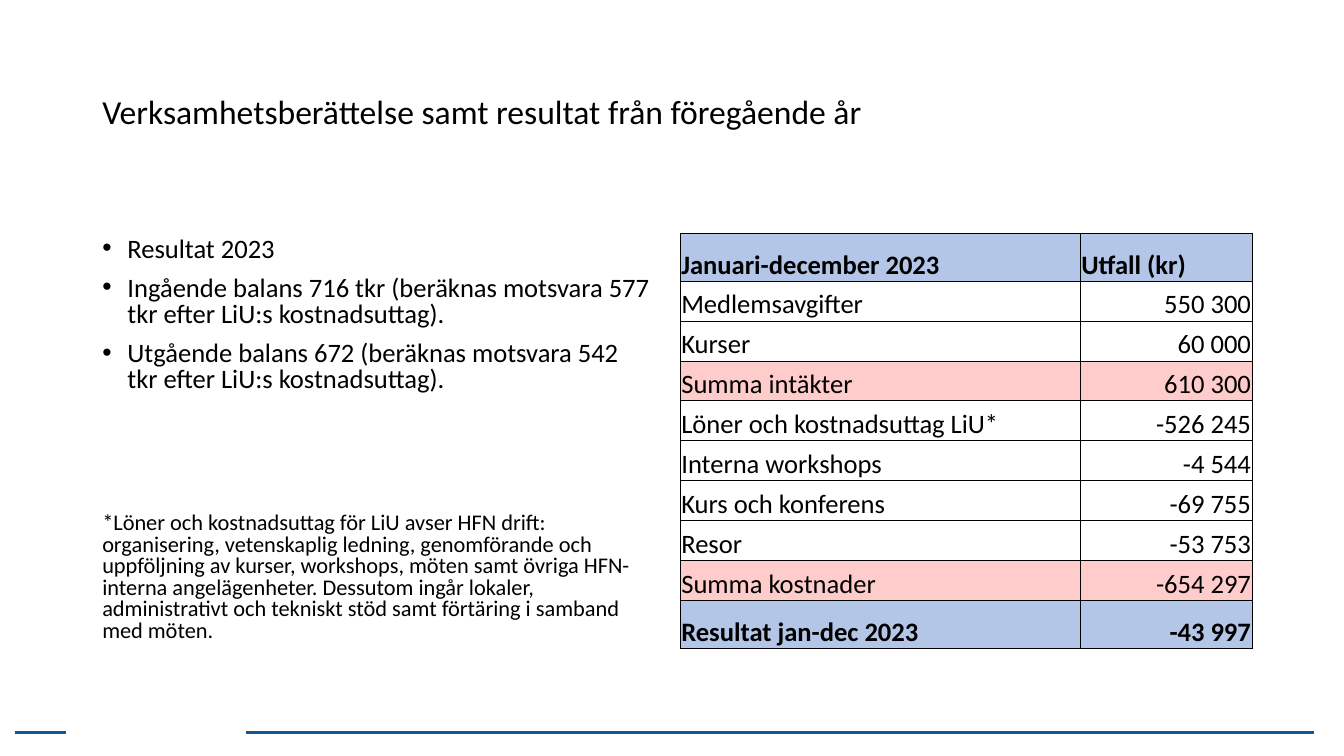
"""Build the slide with last year's activity report and financial result."""
from dataclasses import dataclass

from lxml import etree
from pptx import Presentation
from pptx import util as u
from pptx.dml.color import RGBColor
from pptx.enum import shapes, text
from pptx.oxml import ns

BLACK = RGBColor(0x00, 0x00, 0x00)
RULE_BLUE = RGBColor(0x10, 0x58, 0x95)
TOTAL_BLUE = RGBColor(0xB4, 0xC6, 0xE7)
SUBTOTAL_PINK = RGBColor(0xFF, 0xCC, 0xCC)
FONT = "Calibri"
BODY_SIZE = 19
LEFT, TOP = 66, 166.3


@dataclass(frozen=True)
class FooterRule:
    start: float
    end: float


@dataclass(frozen=True)
class ResultRow:
    label: str
    amount: str
    fill: RGBColor | None = None
    bold: bool = False
    height: float = 28.5
    amount_align: text.PP_ALIGN = text.PP_ALIGN.RIGHT


@dataclass(frozen=True)
class BodyParagraph:
    content: str
    size: float = BODY_SIZE
    bullet: bool = True
    space_before: float = 10


FOOTER_RULES = [FooterRule(175.7, 938.9), FooterRule(10.8, 46.8)]

BODY = [
    BodyParagraph("Resultat 2023", space_before=0),
    BodyParagraph("Ingående balans 716 tkr (beräknas motsvara 577 tkr efter LiU:s kostnadsuttag)."),
    BodyParagraph("Utgående balans 672 (beräknas motsvara 542 tkr efter LiU:s kostnadsuttag)."),
    BodyParagraph(
        "*Löner och kostnadsuttag för LiU avser HFN drift: organisering, vetenskaplig ledning, "
        "genomförande och uppföljning av kurser, workshops, möten samt övriga HFN-interna "
        "angelägenheter. Dessutom ingår lokaler, administrativt och tekniskt stöd samt "
        "förtäring i samband med möten.",
        size=16, bullet=False, space_before=86),
]

RESULT_ROWS = [
    ResultRow("Januari-december 2023", "Utfall (kr)", TOTAL_BLUE, True, 34.5, text.PP_ALIGN.LEFT),
    ResultRow("Medlemsavgifter", "550 300"),
    ResultRow("Kurser", "60 000"),
    ResultRow("Summa intäkter", "610 300", SUBTOTAL_PINK),
    ResultRow("Löner och kostnadsuttag LiU*", "-526 245"),
    ResultRow("Interna workshops", "-4 544"),
    ResultRow("Kurs och konferens", "-69 755"),
    ResultRow("Resor", "-53 753"),
    ResultRow("Summa kostnader", "-654 297", SUBTOTAL_PINK),
    ResultRow("Resultat jan-dec 2023", "-43 997", TOTAL_BLUE, True, 34.5),
]
COLUMN_WIDTHS = [285.8, 122.4]


def write_text(paragraph, content: str, *, size: float = BODY_SIZE, bold: bool = False,
               align: text.PP_ALIGN = text.PP_ALIGN.LEFT, bullet: bool = False,
               line_spacing: float = 1.0, space_before: float = 0) -> None:
    """Fill a paragraph with formatted text."""
    if bullet:
        properties = paragraph._p.get_or_add_pPr()
        properties.set("marL", str(u.Pt(18)))
        properties.set("indent", str(u.Pt(-18)))
        etree.SubElement(properties, ns.qn("a:buFont"), typeface="Arial")
        etree.SubElement(properties, ns.qn("a:buChar"), char="•")
    paragraph.alignment = align
    paragraph.line_spacing = line_spacing
    paragraph.space_before = u.Pt(space_before)
    run = paragraph.add_run()
    run.text = content
    run.font.name = FONT
    run.font.size = u.Pt(size)
    run.font.bold = bold
    run.font.color.rgb = BLACK


def add_text_frame(slide, top: float, width: float, height: float,
                   anchor: text.MSO_ANCHOR):
    """Add a wrapping text box at the left margin and return its frame."""
    shape = slide.shapes.add_textbox(u.Pt(LEFT), u.Pt(top), u.Pt(width), u.Pt(height))
    frame = shape.text_frame
    frame.word_wrap = True
    frame.vertical_anchor = anchor
    return frame


def add_footer_rule(slide, rule: FooterRule) -> None:
    """Draw one horizontal rule at the foot of the slide."""
    height = u.Pt(523.4)
    connector = slide.shapes.add_connector(
        shapes.MSO_CONNECTOR.STRAIGHT, u.Pt(rule.start), height, u.Pt(rule.end), height)
    connector.line.color.rgb = RULE_BLUE
    connector.line.width = u.Pt(2.25)
    etree.SubElement(connector._element.spPr, ns.qn("a:effectLst"))


def add_cell_borders(cell) -> None:
    """Give a cell thin black borders on all sides."""
    properties = cell._tc.get_or_add_tcPr()
    for side in ("lnL", "lnR", "lnT", "lnB"):
        line = etree.SubElement(properties, ns.qn(f"a:{side}"), w=str(u.Pt(0.5)))
        fill = etree.SubElement(line, ns.qn("a:solidFill"))
        etree.SubElement(fill, ns.qn("a:srgbClr"), val=str(BLACK))


def fill_cell(cell, content: str, row: ResultRow, align: text.PP_ALIGN) -> None:
    """Format one table cell and write its text."""
    cell.margin_left = cell.margin_right = cell.margin_top = u.Pt(0.7)
    cell.margin_bottom = u.Pt(0)
    cell.vertical_anchor = text.MSO_ANCHOR.BOTTOM
    add_cell_borders(cell)
    if row.fill is None:
        cell.fill.background()
    else:
        cell.fill.solid()
        cell.fill.fore_color.rgb = row.fill
    write_text(cell.text_frame.paragraphs[0], content, bold=row.bold, align=align)


def add_result_table(slide, rows: list[ResultRow]) -> None:
    """Add the table of income, costs and result."""
    table = slide.shapes.add_table(
        len(rows), len(COLUMN_WIDTHS), u.Pt(486), u.Pt(TOP), u.Pt(sum(COLUMN_WIDTHS)),
        u.Pt(sum(row.height for row in rows))).table
    table.first_row = table.horz_banding = False
    for column, width in zip(table.columns, COLUMN_WIDTHS):
        column.width = u.Pt(width)
    for index, row in enumerate(rows):
        table.rows[index].height = u.Pt(row.height)
        fill_cell(table.cell(index, 0), row.label, row, text.PP_ALIGN.LEFT)
        fill_cell(table.cell(index, 1), row.amount, row, row.amount_align)


def main() -> None:
    """Build and save the presentation."""
    presentation = Presentation()
    presentation.slide_width, presentation.slide_height = u.Pt(960), u.Pt(540)
    slide = presentation.slides.add_slide(presentation.slide_layouts[6])

    for rule in FOOTER_RULES:
        add_footer_rule(slide, rule)

    title = add_text_frame(slide, 28.8, 828, 104.4, text.MSO_ANCHOR.MIDDLE)
    write_text(title.paragraphs[0], "Verksamhetsberättelse samt resultat från föregående år",
               size=24, line_spacing=0.9)

    body = add_text_frame(slide, TOP, 408.2, 319.7, text.MSO_ANCHOR.TOP)
    for index, item in enumerate(BODY):
        paragraph = body.add_paragraph() if index else body.paragraphs[0]
        write_text(paragraph, item.content, size=item.size, bullet=item.bullet,
                   line_spacing=0.8, space_before=item.space_before)

    add_result_table(slide, RESULT_ROWS)
    presentation.save("out.pptx")


if __name__ == "__main__":
    main()
